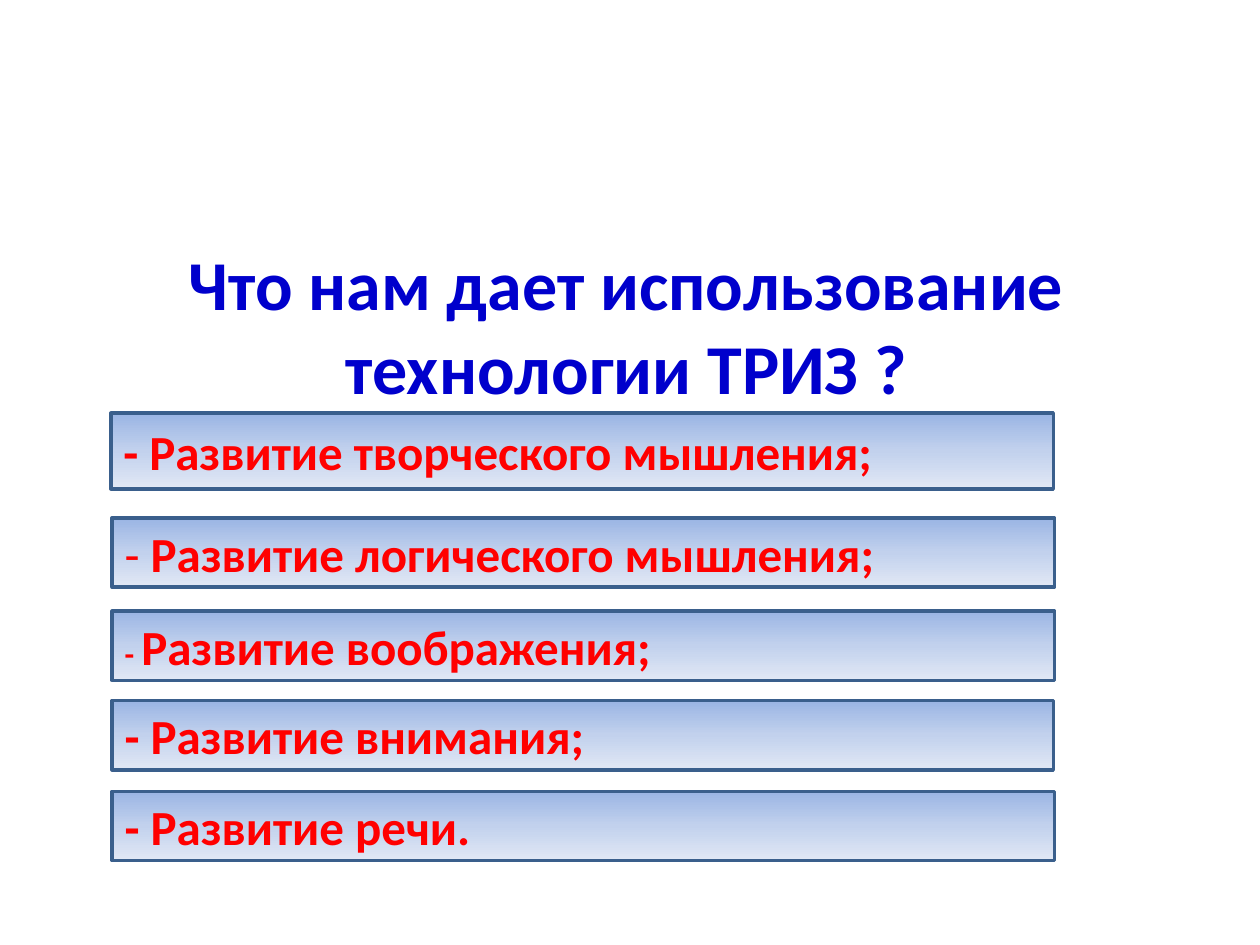
import copy
from dataclasses import dataclass

import pptx
import pptx.dml.color
import pptx.enum.shapes
import pptx.enum.text
import pptx.oxml.ns
import pptx.util

PX = 9144  # EMU per px, 100 px to the inch
FONT = "Calibri"
COLORS = {
    "title": "0000CC",
    "text": "FF0000",
    "line": "3A5F8C",
    "top": "9AB5E4",
    "middle": "C2D1ED",
    "bottom": "E1E8F5",
}
GRADIENT = [(0, "top"), (0.5, "middle"), (1, "bottom")]


@dataclass
class Run:
    text: str
    size: int = 28
    bold: bool = True
    color: str = "text"


@dataclass
class Bar:
    top: int
    runs: list[Run]
    left: int = 89
    width: int = 748
    height: int = 55


BARS = [
    Bar(328, [Run("- Развитие творческого мышления;")], left=88, height=60),
    Bar(411, [Run("-", bold=False), Run(" Развитие логического мышления;")]),
    Bar(485, [Run("- ", size=18), Run("Развитие воображения;")]),
    Bar(556, [Run("- Развитие внимания;")], width=747),
    Bar(628, [Run("- Развитие речи.")]),
]


def rgb(name: str) -> pptx.dml.color.RGBColor:
    return pptx.dml.color.RGBColor.from_string(COLORS[name])


def box(left: int, top: int, width: int, height: int) -> list[pptx.util.Emu]:
    return [pptx.util.Emu(v * PX) for v in (left, top, width, height)]


def write(sp, runs: list[Run], align) -> None:
    tf = sp.text_frame
    tf.word_wrap = True
    tf.vertical_anchor = pptx.enum.text.MSO_ANCHOR.MIDDLE
    p = tf.paragraphs[0]
    p.alignment = align
    for run in runs:
        r = p.add_run()
        r.text = run.text
        r.font.name = FONT
        r.font.size = pptx.util.Pt(run.size)
        r.font.bold = run.bold
        r.font.color.rgb = rgb(run.color)


def fill_gradient(sp) -> None:
    sp.fill.gradient()
    sp.fill.gradient_angle = 270
    # A new gradient has two stops; add the middle one
    first = next(sp._element.spPr.iter(pptx.oxml.ns.qn("a:gs")))
    first.addnext(copy.deepcopy(first))
    for stop, (position, color) in zip(sp.fill.gradient_stops, GRADIENT):
        stop.position = position
        stop.color.rgb = rgb(color)


def draw_bar(s, bar: Bar) -> None:
    sp = s.shapes.add_shape(
        pptx.enum.shapes.MSO_SHAPE.RECTANGLE,
        *box(bar.left, bar.top, bar.width, bar.height),
    )
    sp.shadow.inherit = False
    fill_gradient(sp)
    sp.line.color.rgb = rgb("line")
    sp.line.width = pptx.util.Pt(2)
    write(sp, bar.runs, pptx.enum.text.PP_ALIGN.LEFT)


def main() -> None:
    prs = pptx.Presentation()
    prs.slide_width, prs.slide_height = box(0, 0, 1000, 750)[2:]
    s = prs.slides.add_slide(prs.slide_layouts[6])

    # Title
    title = s.shapes.add_textbox(*box(47, 195, 900, 125))
    write(
        title,
        [Run("Что нам дает использование технологии ТРИЗ ?", 40, color="title")],
        pptx.enum.text.PP_ALIGN.CENTER,
    )

    # Benefits
    for bar in BARS:
        draw_bar(s, bar)

    prs.save("out.pptx")


if __name__ == "__main__":
    main()
